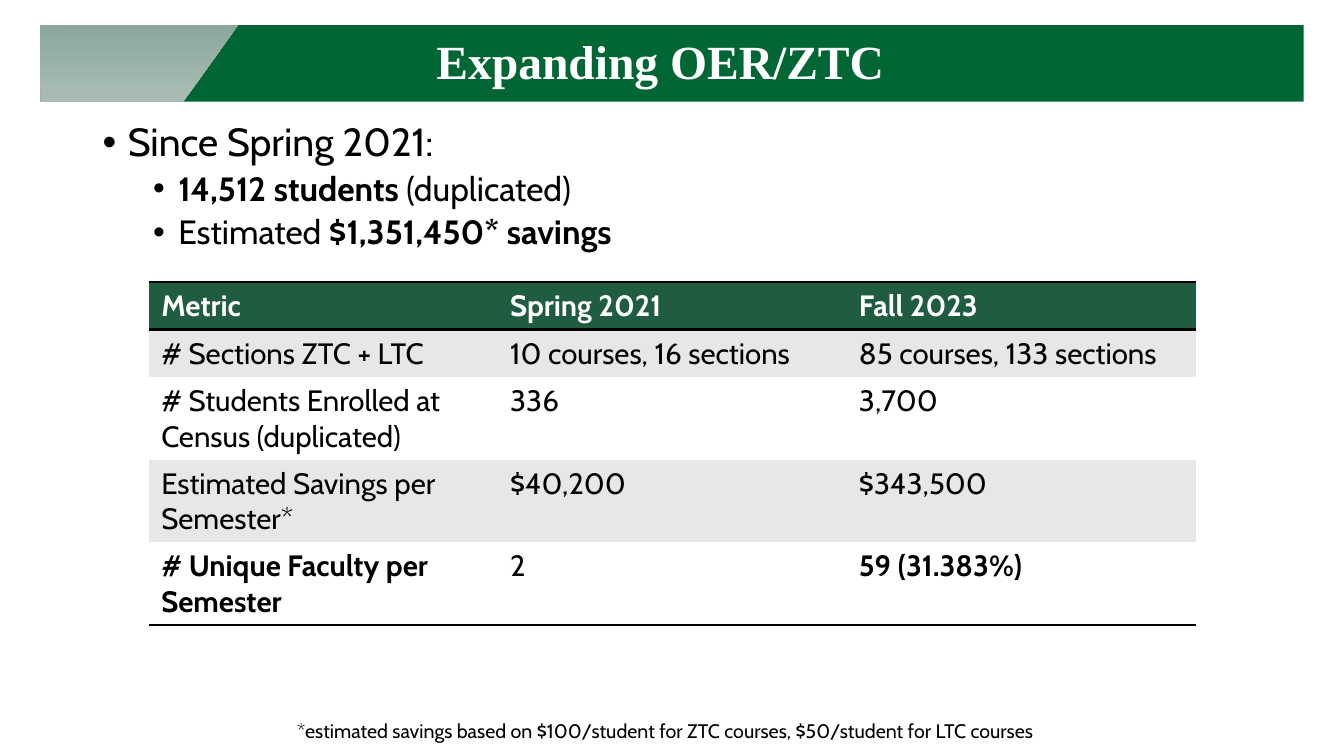
import dataclasses

import pptx
import pptx.dml.color
import pptx.enum.shapes
import pptx.enum.text
import pptx.oxml
import pptx.oxml.ns
import pptx.util

PX = 9144
ANCHOR = pptx.enum.text.MSO_ANCHOR
FIT = pptx.enum.text.MSO_AUTO_SIZE
NO_GRID_STYLE = "{2D5ABB26-0587-4C30-8999-92F81FD0307C}"


@dataclasses.dataclass(frozen=True)
class Theme:
    heading_font: str = "Times New Roman"
    text_font: str = "Cabin"
    white: str = "FFFFFF"
    ink: str = "000000"
    banner: str = "006633"
    accent_bottom: str = "A9BDB5"
    accent_top: str = "8BA79D"
    header: str = "205C40"
    band: str = "E7E7E7"
    title_size: int = 34
    bullet_sizes: tuple = (28, 24)
    table_size: int = 21
    footnote_size: int = 14
    rule_width: int = 2


def color(value):
    return pptx.dml.color.RGBColor.from_string(value)


def px(*lengths):
    return [length * PX for length in lengths]


class Deck:
    def __init__(self, theme, width, height):
        self.theme = theme
        self.deck = pptx.Presentation()
        self.deck.slide_width, self.deck.slide_height = px(width, height)
        self.slide = self.deck.slides.add_slide(self.deck.slide_layouts[5])

    def run(self, paragraph, text, size, fill=None, bold=False, font=None):
        run = paragraph.add_run()
        run.text = text
        run.font.size = pptx.util.Pt(size)
        run.font.name = font or self.theme.text_font
        run.font.bold = bold
        run.font.color.rgb = color(fill or self.theme.ink)

    def bar(self, box, fill):
        bar = self.slide.shapes.add_shape(
            pptx.enum.shapes.MSO_SHAPE.RECTANGLE, *px(*box))
        bar.shadow.inherit = False
        bar.fill.solid()
        bar.fill.fore_color.rgb = color(fill)
        bar.line.fill.background()

    def gradient_outline(self, points, fills):
        builder = self.slide.shapes.build_freeform(*points[0], scale=PX)
        builder.add_line_segments(points[1:], close=True)
        outline = builder.convert_to_shape()
        outline.shadow.inherit = False
        outline.line.fill.background()
        outline.fill.gradient()
        outline.fill.gradient_angle = 90
        for stop, fill in zip(outline.fill.gradient_stops, fills):
            stop.color.rgb = color(fill)

    def title(self, box, text):
        title = self.slide.shapes.title
        title.element.getparent().append(title.element)
        title.left, title.top, title.width, title.height = px(*box)
        frame = title.text_frame
        frame.auto_size = FIT.NONE
        frame.vertical_anchor = ANCHOR.MIDDLE
        paragraph = frame.paragraphs[0]
        paragraph.alignment = pptx.enum.text.PP_ALIGN.CENTER
        paragraph.line_spacing = 0.9
        self.run(paragraph, text, self.theme.title_size, self.theme.white,
                 True, self.theme.heading_font)

    def bullets(self, box, items):
        frame = self.slide.shapes.add_textbox(*px(*box)).text_frame
        frame.word_wrap = True
        for index, (level, runs) in enumerate(items):
            paragraph = frame.add_paragraph() if index else frame.paragraphs[0]
            paragraph.level = level
            paragraph.line_spacing = 0.9
            paragraph.space_before = pptx.util.Pt((10, 5)[level])
            properties = paragraph._p.get_or_add_pPr()
            properties.set("marL", str((25 + 50 * level) * PX))
            properties.set("indent", str(-25 * PX))
            properties.append(pptx.oxml.parse_xml(
                f'<a:buFont {pptx.oxml.ns.nsdecls("a")} typeface="Arial"/>'))
            properties.append(pptx.oxml.parse_xml(
                f'<a:buChar {pptx.oxml.ns.nsdecls("a")} char="•"/>'))
            for text, bold in runs:
                self.run(paragraph, text, self.theme.bullet_sizes[level], bold=bold)

    def rule_cell(self, cell, edges):
        for index, edge in enumerate(edges):
            cell._tc.get_or_add_tcPr().insert(index, pptx.oxml.parse_xml(
                f'<a:ln{edge} {pptx.oxml.ns.nsdecls("a")} '
                f'w="{pptx.util.Pt(self.theme.rule_width)}"><a:solidFill>'
                f'<a:srgbClr val="{self.theme.ink}"/></a:solidFill></a:ln{edge}>'))

    def table(self, box, row_heights, rows, bold_cells):
        theme = self.theme
        table = self.slide.shapes.add_table(
            len(rows), len(rows[0]), *px(*box)).table
        table._tbl.tblPr.find(
            pptx.oxml.ns.qn("a:tableStyleId")).text = NO_GRID_STYLE
        table.horz_banding = False
        last = len(rows) - 1
        for row, (height, texts) in enumerate(zip(row_heights, rows)):
            table.rows[row].height = height * PX
            header = row == 0
            fill = theme.header if header else theme.band if row % 2 else theme.white
            for column, text in enumerate(texts):
                cell = table.cell(row, column)
                cell.margin_left = cell.margin_right = 12 * PX
                cell.margin_top = cell.margin_bottom = 6 * PX
                cell.fill.solid()
                cell.fill.fore_color.rgb = color(fill)
                self.run(cell.text_frame.paragraphs[0], text, theme.table_size,
                         theme.white if header else theme.ink,
                         header or (row, column) in bold_cells)
                self.rule_cell(cell, "TB" if header else "B" if row == last else "")

    def footnote(self, box, text):
        frame = self.slide.shapes.add_textbox(*px(*box)).text_frame
        frame.word_wrap = False
        frame.auto_size = FIT.SHAPE_TO_FIT_TEXT
        self.run(frame.paragraphs[0], text, self.theme.footnote_size)


def main():
    theme = Theme()
    page = Deck(theme, 1333, 750)
    page.bar((40, 25, 1253, 76), theme.banner)
    page.title((80, 35, 1150, 58), "Expanding OER/ZTC")
    page.gradient_outline([(40, 101), (182, 101), (236, 25), (40, 25)],
                          (theme.accent_bottom, theme.accent_top))
    page.bullets((92, 117, 1150, 558), [
        (0, [("Since Spring 2021:", False)]),
        (1, [("14,512 students ", True), ("(duplicated)", False)]),
        (1, [("Estimated ", False), ("$1,351,450* savings", True)]),
    ])
    page.table((148, 280, 1038, 340), (47, 47, 82, 82, 82), [
        ("Metric", "Spring 2021", "Fall 2023"),
        ("# Sections ZTC + LTC", "10 courses, 16 sections", "85 courses, 133 sections"),
        ("# Students Enrolled at Census (duplicated)", "336", "3,700"),
        ("Estimated Savings per Semester*", "$40,200", "$343,500"),
        ("# Unique Faculty per Semester", "2", "59 (31.383%)"),
    ], {(4, 0), (4, 2)})
    page.footnote((285, 708, 764, 34),
                  "*estimated savings based on $100/student for ZTC courses, "
                  "$50/student for LTC courses")
    page.deck.save("out.pptx")


if __name__ == "__main__":
    main()
